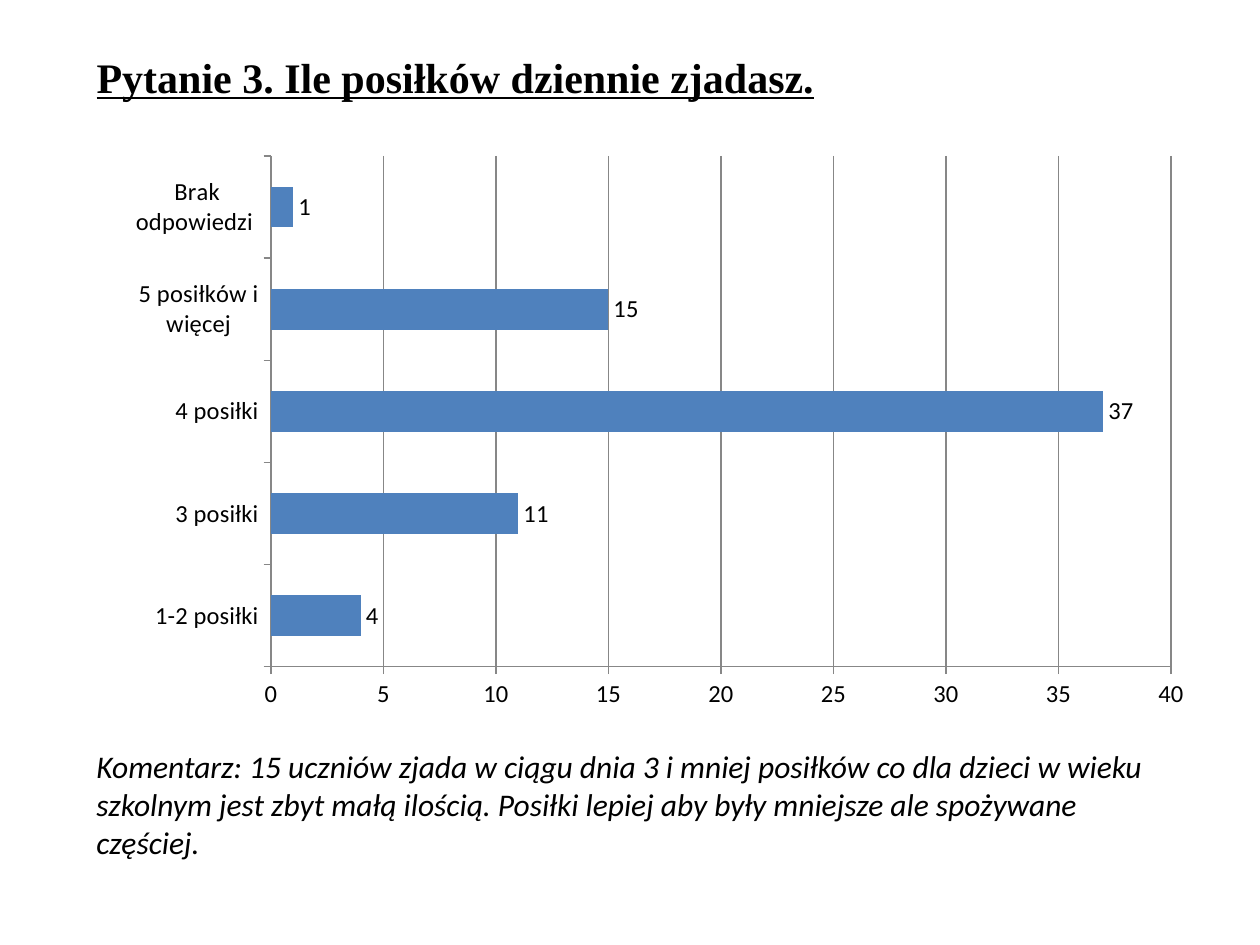
from lxml import etree
from pptx import Presentation
from pptx.chart.data import CategoryChartData
from pptx.dml.color import RGBColor
from pptx.enum.chart import XL_CHART_TYPE, XL_LABEL_POSITION, XL_TICK_MARK
from pptx.enum.text import MSO_ANCHOR, PP_ALIGN
from pptx.oxml import parse_xml
from pptx.oxml.ns import nsdecls
from pptx.util import Pt

PX = 914400 // 126
BLACK = RGBColor(0x00, 0x00, 0x00)
BLUE = RGBColor(0x4F, 0x81, 0xBD)
GREY = RGBColor(0x87, 0x87, 0x87)
BAR = XL_CHART_TYPE.BAR_CLUSTERED
OUTSIDE_END = XL_LABEL_POSITION.OUTSIDE_END
TICK_OUT, TICK_NONE = XL_TICK_MARK.OUTSIDE, XL_TICK_MARK.NONE
TOP, LEFT = MSO_ANCHOR.TOP, PP_ALIGN.LEFT

QUESTION = "Pytanie 3. Ile posiłków dziennie zjadasz."
COMMENT = (
    "Komentarz: 15 uczniów zjada w ciągu dnia 3 i mniej posiłków co dla dzieci "
    "w wieku szkolnym jest zbyt małą ilością. Posiłki lepiej aby były mniejsze "
    "ale spożywane częściej."
)
ANSWERS = [
    ("1-2 posiłki", 4),
    ("3 posiłki", 11),
    ("4 posiłki", 37),
    ("5 posiłków i więcej", 15),
    ("Brak odpowiedzi ", 1),
]

# left, top, width, height in px
QUESTION_BOX = (84, 45, 1081, 63)
CHART_BOX = (115, 145, 1091, 576)
COMMENT_BOX = (84, 741, 1081, 127)
PLOT_BOX = (271, 156, 900, 511)


def emu(box):
    return [length * PX for length in box]


def write(shape, text, font_name, size):
    frame = shape.text_frame
    frame.word_wrap = True
    frame.vertical_anchor = TOP
    paragraph = frame.paragraphs[0]
    paragraph.alignment = LEFT
    run = paragraph.add_run()
    run.text = text
    run.font.name = font_name
    run.font.size = Pt(size)
    run.font.color.rgb = BLACK
    return run.font


def place_plot(chart):
    """Fix the inner plot area at PLOT_BOX, as fractions of the chart."""
    left, top, width, height = CHART_BOX
    plot_left, plot_top, plot_width, plot_height = PLOT_BOX
    fractions = {
        "x": (plot_left - left) / width,
        "y": (plot_top - top) / height,
        "w": plot_width / width,
        "h": plot_height / height,
    }
    layout = parse_xml(
        f'<c:layout {nsdecls("c")}><c:manualLayout><c:layoutTarget val="inner"/>'
        '<c:xMode val="edge"/><c:yMode val="edge"/></c:manualLayout></c:layout>'
    )
    for key, value in fractions.items():
        tag = layout[0][0].tag.replace("layoutTarget", key)
        etree.SubElement(layout[0], tag).set("val", f"{value:.3f}")
    plot_area = chart.plots[0]._element.getparent()
    for old in plot_area.xpath("c:layout"):
        plot_area.remove(old)
    plot_area.insert(0, layout)


def add_answers_chart(slide):
    data = CategoryChartData()
    data.categories = [answer for answer, _ in ANSWERS]
    data.add_series("Series 1", [count for _, count in ANSWERS])
    chart = slide.shapes.add_chart(BAR, *emu(CHART_BOX), data).chart
    chart.has_legend = False
    chart.has_title = False
    chart.font.name = "Calibri"
    chart.font.size = Pt(14)
    chart.font.color.rgb = BLACK

    plot = chart.plots[0]
    plot.gap_width = 150
    plot.vary_by_categories = False
    bars = plot.series[0].format.fill
    bars.solid()
    bars.fore_color.rgb = BLUE
    plot.has_data_labels = True
    plot.data_labels.show_value = True
    plot.data_labels.position = OUTSIDE_END

    counts = chart.value_axis
    counts.minimum_scale, counts.maximum_scale, counts.major_unit = 0, 40, 5
    counts.has_major_gridlines = True
    chart.category_axis.has_major_gridlines = False
    for axis in (counts, chart.category_axis):
        axis.major_tick_mark = TICK_OUT
        axis.minor_tick_mark = TICK_NONE
    for part in (counts, chart.category_axis, counts.major_gridlines):
        part.format.line.color.rgb = GREY
        part.format.line.width = Pt(0.75)
    place_plot(chart)


def main():
    deck = Presentation()
    deck.slide_width, deck.slide_height = 1260 * PX, 945 * PX
    slide = deck.slides.add_slide(deck.slide_layouts[5])

    title = slide.shapes.title
    title.left, title.top, title.width, title.height = emu(QUESTION_BOX)
    font = write(title, QUESTION, "Times New Roman", 24)
    font.bold = font.underline = True

    add_answers_chart(slide)

    comment = slide.shapes.add_textbox(*emu(COMMENT_BOX))
    write(comment, COMMENT, "Calibri", 18).italic = True

    deck.save("out.pptx")


if __name__ == "__main__":
    main()
